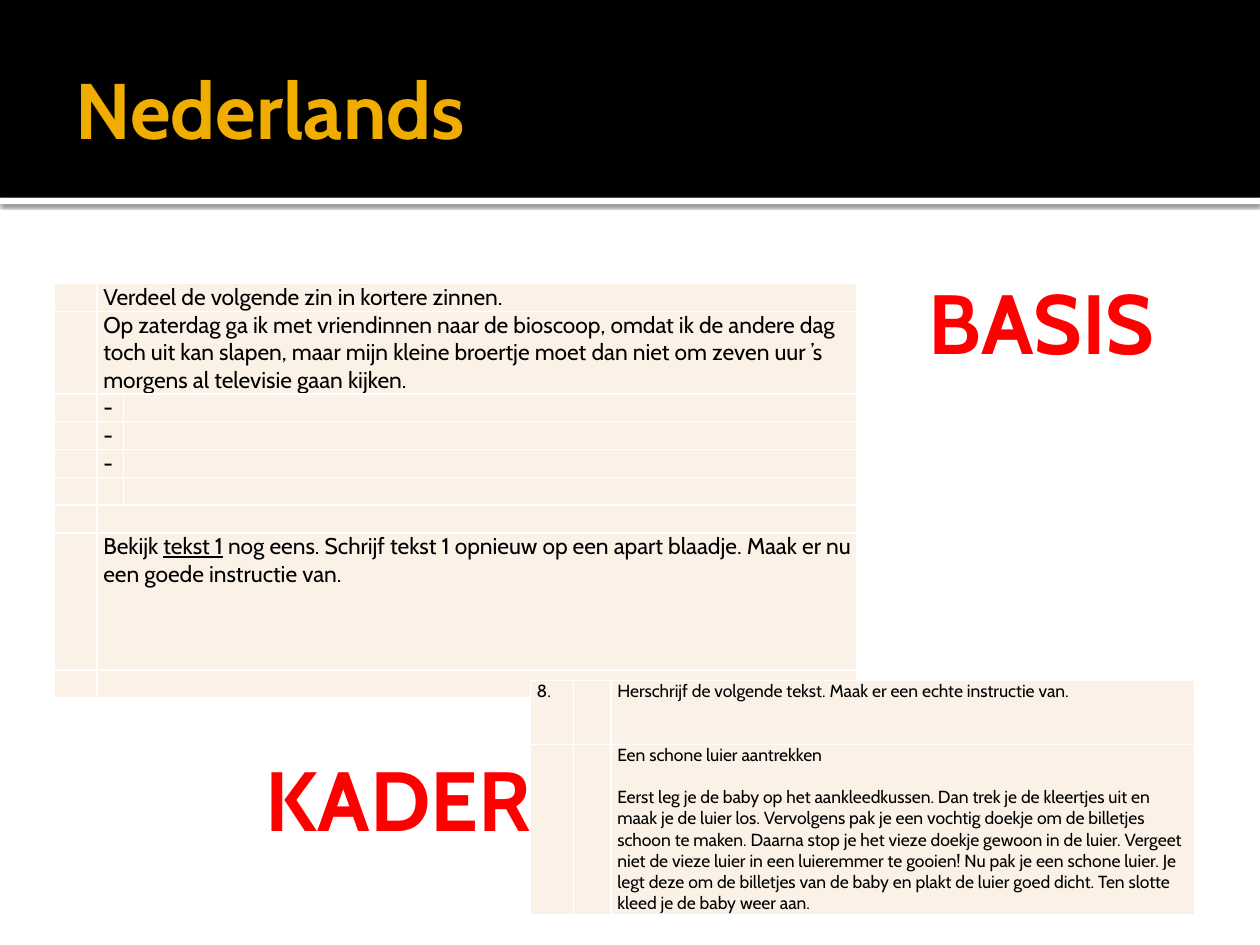
from lxml import etree
from pptx import Presentation
from pptx.dml.color import RGBColor
from pptx.enum.shapes import MSO_SHAPE as Shape
from pptx.enum.text import MSO_ANCHOR as Anchor, PP_ALIGN as Align
from pptx.oxml import parse_xml
from pptx.oxml.ns import nsdecls, qn
from pptx.util import Emu, Inches, Pt

COLORS = {"band": "000000", "rule": "FFFFFF", "title": "F0AD00",
          "cell": "FCF1E7", "border": "FFFFFF", "text": "000000", "label": "FF0000"}
FONT = "Cabin"


def color(name):
    return RGBColor.from_string(COLORS[name])


def write(frame, paragraphs, size, ink="text", bold=False, gap=0):
    for index, spans in enumerate(paragraphs):
        para = frame.paragraphs[0] if index == 0 else frame.add_paragraph()
        para.alignment = Align.LEFT
        if index < len(paragraphs) - 1:
            para.space_after = Pt(gap)
        for text, underline in spans:
            span = para.add_run()
            span.text = text
            span.font.name = FONT
            span.font.size = Pt(size)
            span.font.bold = bold
            span.font.underline = underline
            span.font.color.rgb = color(ink)


def plain(text):
    return [(text, False)]


def add_bar(page, left, top, width, height, fill):
    bar = page.shapes.add_shape(Shape.RECTANGLE, *map(Inches, (left, top, width, height)))
    bar.shadow.inherit = False
    bar.fill.solid()
    bar.fill.fore_color.rgb = color(fill)
    bar.line.fill.background()
    return bar


def add_header(page, left, top, width, height):
    rule = add_bar(page, left, top + height, width, 0.05, "rule")
    effects = rule._element.spPr.find(qn("a:effectLst"))
    effects.append(parse_xml(
        f'<a:outerShdw {nsdecls("a")} blurRad="{Pt(2.5)}" dist="{Pt(0.8)}" '
        'dir="5400000" algn="tl" rotWithShape="0"><a:srgbClr val="000000">'
        '<a:alpha val="60000"/></a:srgbClr></a:outerShdw>'))
    add_bar(page, left, top, width, height, "band")
    title = page.shapes.title
    title.left, title.top = Inches(left + 0.5), Inches(top + 0.17)
    title.width, title.height = Inches(width - 1), Inches(height - 0.2)
    frame = title.text_frame
    frame.vertical_anchor = Anchor.MIDDLE
    frame.margin_left = Inches(0.1)
    frame.margin_right = frame.margin_top = frame.margin_bottom = Inches(0.05)
    write(frame, [plain("Nederlands")], size=45, ink="title", bold=True)
    page.shapes._spTree.append(title._element)


def style_cell(cell, size):
    cell.margin_left = cell.margin_right = Inches(0.05)
    cell.margin_top = cell.margin_bottom = Emu(0)
    props = cell._tc.get_or_add_tcPr()
    for side in ("lnL", "lnR", "lnT", "lnB"):
        props.append(parse_xml(
            f'<a:{side} {nsdecls("a")} w="{Pt(1)}"><a:solidFill>'
            f'<a:srgbClr val="{COLORS["border"]}"/></a:solidFill></a:{side}>'))
    cell.fill.solid()
    cell.fill.fore_color.rgb = color("cell")
    para = cell.text_frame.paragraphs[0]
    if not para.runs:
        etree.SubElement(para._p, qn("a:endParaRPr"), sz=str(size * 100))


def add_grid(page, left, top, columns, rows, texts, merged_rows, size, gap=0):
    frame = page.shapes.add_table(len(rows), len(columns), Inches(left), Inches(top),
                                  Inches(sum(columns)), Inches(sum(rows)))
    table = frame.table
    table.first_row = table.horz_banding = False
    for column, width in zip(table.columns, columns):
        column.width = Inches(width)
    for row, height in zip(table.rows, rows):
        row.height = Inches(height)
    last = len(columns) - 1
    for row in merged_rows:
        table.cell(row, last - 1).merge(table.cell(row, last))
    for (row, column), paragraphs in texts.items():
        write(table.cell(row, column).text_frame, paragraphs, size, gap=gap)
    for cell in table.iter_cells():
        style_cell(cell, size)


def add_basis_table(page, left, top):
    line = 0.22
    texts = {
        (0, 1): [plain("Verdeel de volgende zin in kortere zinnen.")],
        (1, 1): [plain("Op zaterdag ga ik met vriendinnen naar de bioscoop, omdat ik de "
                       "andere dag toch uit kan slapen, maar mijn kleine broertje moet dan "
                       "niet om zeven uur ’s morgens al televisie gaan kijken.")],
        (7, 1): [[("Bekijk ", False), ("tekst 1", True),
                  (" nog eens. Schrijf tekst 1 opnieuw op een apart blaadje. "
                   "Maak er nu een goede instructie van.", False)]],
    }
    texts.update({(row, 1): [plain("-")] for row in (2, 3, 4)})
    add_grid(page, left, top, [0.34, 0.21, 5.82],
             [line, 0.65] + [line] * 5 + [1.09, line],
             texts, merged_rows=(0, 1, 6, 7, 8), size=13)


def add_kader_table(page, left, top):
    texts = {
        (0, 0): [plain("8.")],
        (0, 2): [plain("Herschrijf de volgende tekst. Maak er een echte instructie van.")],
        (1, 2): [plain("Een schone luier aantrekken"),
                 plain("Eerst leg je de baby op het aankleedkussen. Dan trek je de kleertjes "
                       "uit en maak je de luier los. Vervolgens pak je een vochtig doekje om "
                       "de billetjes schoon te maken. Daarna stop je het vieze doekje gewoon "
                       "in de luier. Vergeet niet de vieze luier in een luieremmer te gooien! "
                       "Nu pak je een schone luier. Je legt deze om de billetjes van de baby "
                       "en plakt de luier goed dicht. Ten slotte kleed je de baby weer aan.")],
    }
    add_grid(page, left, top, [0.34, 0.3, 0.19, 4.44], [0.51, 1.34],
             texts, merged_rows=(0, 1), size=10, gap=12)


def add_label(page, text, left, top, width, height):
    box = page.shapes.add_textbox(*map(Inches, (left, top, width, height)))
    box.text_frame.word_wrap = True
    write(box.text_frame, [plain(text)], size=48, ink="label", bold=True)


def main():
    deck = Presentation()
    deck.slide_width, deck.slide_height = Inches(10), Inches(7.5)
    page = deck.slides.add_slide(deck.slide_layouts[5])
    add_header(page, 0, 0, 10, 1.57)
    add_basis_table(page, 0.43, 2.25)
    add_kader_table(page, 4.21, 5.4)
    add_label(page, "BASIS", 7.27, 2.1, 2.05, 0.91)
    add_label(page, "KADER", 2.01, 5.88, 2.44, 0.91)
    deck.save("out.pptx")


if __name__ == "__main__":
    main()
